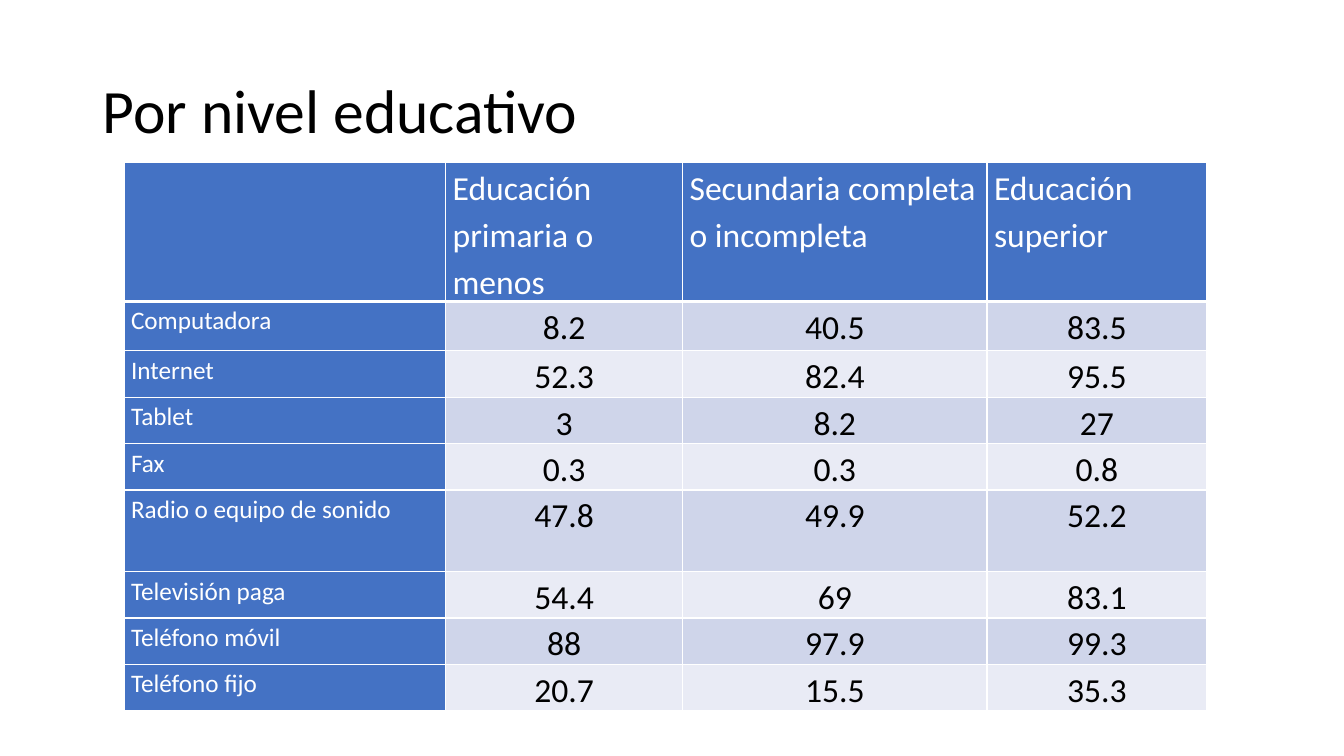
from lxml.etree import SubElement
from pptx import Presentation
from pptx.dml.color import RGBColor
from pptx.enum.text import MSO_ANCHOR, PP_ALIGN
from pptx.oxml.ns import qn
from pptx.util import Pt

PX = 9144  # EMU in one px, 100 px to the inch
FONT = "Calibri"
BLACK = RGBColor(0x00, 0x00, 0x00)
WHITE = RGBColor(0xFF, 0xFF, 0xFF)
BLUE = RGBColor(0x44, 0x72, 0xC4)
BANDS = [RGBColor(0xCF, 0xD5, 0xEA), RGBColor(0xE9, 0xEB, 0xF5)]

HEADS = ["", "Educación primaria o menos",
         "Secundaria completa o incompleta", "Educación superior"]
RATES = [
    ["Computadora", "8.2", "40.5", "83.5"],
    ["Internet", "52.3", "82.4", "95.5"],
    ["Tablet", "3", "8.2", "27"],
    ["Fax", "0.3", "0.3", "0.8"],
    ["Radio o equipo de sonido", "47.8", "49.9", "52.2"],
    ["Televisión paga", "54.4", "69", "83.1"],
    ["Teléfono móvil", "88", "97.9", "99.3"],
    ["Teléfono fijo", "20.7", "15.5", "35.3"],
]
WIDTHS = [319, 235, 302, 218]
HEIGHTS = [135, 49, 44, 44, 44, 81, 43, 45, 46]

HEAD = {"size": Pt(24), "color": WHITE, "align": PP_ALIGN.LEFT}
LABEL = {"size": Pt(18), "color": WHITE, "align": PP_ALIGN.LEFT}
VALUE = {"size": Pt(24), "color": BLACK, "align": PP_ALIGN.CENTER}
TITLE = {"size": Pt(44), "color": BLACK, "align": PP_ALIGN.LEFT}
INSETS = {"margin_left": 7, "margin_top": 0,
          "margin_right": 7, "margin_bottom": 0}


def px(*nums):
    return [num * PX for num in nums]


def write(frame, text, look, leading):
    para = frame.paragraphs[0]
    para.alignment = look["align"]
    para.line_spacing = leading
    run = para.add_run()
    run.text = text
    traits = {"name": FONT, "size": look["size"], "bold": False}
    for name, value in traits.items():
        setattr(run.font, name, value)
    run.font.color.rgb = look["color"]


def add_title(slide, text):
    box = slide.shapes.add_textbox(*px(92, 40, 1150, 145))
    frame = box.text_frame
    frame.word_wrap = True
    frame.vertical_anchor = MSO_ANCHOR.MIDDLE
    write(frame, text, TITLE, 0.9)


def edge(cell, base):
    """Draw white borders, with the bottom one base points wide."""
    props = cell._tc.get_or_add_tcPr()
    sides = {"lnL": 1, "lnR": 1, "lnT": 1, "lnB": base}
    for spot, (side, width) in enumerate(sides.items()):
        line = SubElement(props, qn(f"a:{side}"), w=str(Pt(width)))
        fill = SubElement(line, qn("a:solidFill"))
        SubElement(fill, qn("a:srgbClr"), val=str(WHITE))
        props.insert(spot, line)


def fill_cell(cell, text, row, col):
    cell.fill.solid()
    cell.fill.fore_color.rgb = BANDS[(row - 1) % 2] if row and col else BLUE
    edge(cell, 1 if row else 3)
    for name, value in INSETS.items():
        setattr(cell, name, value * PX)
    if text:
        look = HEAD if row == 0 else VALUE if col else LABEL
        write(cell.text_frame, text, look, 1.15)


def add_rates(slide):
    rows = [HEADS, *RATES]
    place = px(123, 161, sum(WIDTHS), sum(HEIGHTS))
    table = slide.shapes.add_table(len(rows), len(HEADS), *place).table
    table.first_col = True
    for col, width in zip(table.columns, WIDTHS):
        col.width = width * PX
    for row, height in zip(table.rows, HEIGHTS):
        row.height = height * PX
    for r, texts in enumerate(rows):
        for c, text in enumerate(texts):
            fill_cell(table.cell(r, c), text, r, c)


def main():
    deck = Presentation()
    deck.slide_width, deck.slide_height = px(1333, 750)
    slide = deck.slides.add_slide(deck.slide_layouts[6])
    add_title(slide, "Por nivel educativo")
    add_rates(slide)
    deck.save("out.pptx")


if __name__ == "__main__":
    main()
